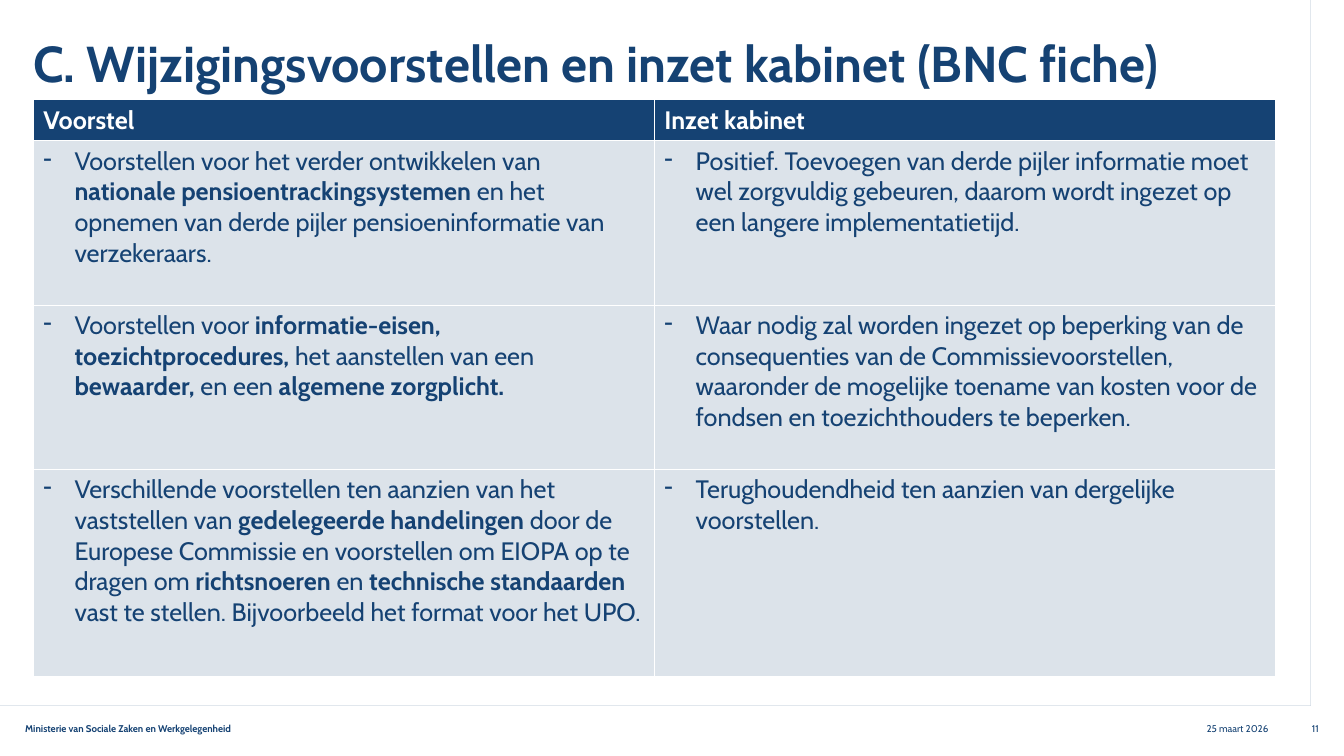
import math
from dataclasses import dataclass

import pptx
import pptx.dml.color
import pptx.enum.text
import pptx.oxml
import pptx.oxml.ns
import pptx.util

Inches = pptx.util.Inches
Pt = pptx.util.Pt
Align = pptx.enum.text.PP_ALIGN
Anchor = pptx.enum.text.MSO_ANCHOR

FONT = "Cabin"
NAVY = "154273"
PALE = "DCE3EA"
WHITE = "FFFFFF"


@dataclass
class FooterText:
    text: str
    left: float
    width: float
    align: Align = Align.RIGHT
    bold: bool = False


@dataclass
class ProposalRow:
    height: float
    proposal: str
    position: str


FOOTER = [
    FooterText("Ministerie van Sociale Zaken en Werkgelegenheid", 0.25, 3.19, Align.LEFT, True),
    FooterText("25 maart 2026", 11.75, 0.83),
    FooterText("11", 12.65, 0.43),
]

ROWS = [
    ProposalRow(0.4, "Voorstel", "Inzet kabinet"),
    ProposalRow(
        1.63,
        "Voorstellen voor het verder ontwikkelen van **nationale pensioentrackingsystemen** "
        "en het opnemen van derde pijler pensioeninformatie van verzekeraars.",
        "Positief. Toevoegen van derde pijler informatie moet wel zorgvuldig gebeuren, "
        "daarom wordt ingezet op een langere implementatietijd.",
    ),
    ProposalRow(
        1.63,
        "Voorstellen voor **informatie-eisen, toezichtprocedures, **het aanstellen van een "
        "**bewaarder, **en een **algemene zorgplicht.**",
        "Waar nodig zal worden ingezet op beperking van de consequenties van de "
        "Commissievoorstellen, waaronder de mogelijke toename van kosten voor de fondsen "
        "en toezichthouders te beperken.",
    ),
    ProposalRow(
        2.06,
        "Verschillende voorstellen ten aanzien van het vaststellen van "
        "**gedelegeerde handelingen** door de Europese Commissie en voorstellen om EIOPA "
        "op te dragen om **richtsnoeren** en **technische standaarden **vast te stellen. "
        "Bijvoorbeeld het format voor het UPO.",
        "Terughoudendheid ten aanzien van dergelijke voorstellen.",
    ),
]


def color(value: str) -> pptx.dml.color.RGBColor:
    return pptx.dml.color.RGBColor.from_string(value)


def format_font(paragraph, size: float, value: str, bold: bool | None = None) -> None:
    paragraph.font.name = FONT
    paragraph.font.size = Pt(size)
    paragraph.font.color.rgb = color(value)
    paragraph.font.bold = bold


def clear_margins(frame) -> None:
    frame.margin_left = frame.margin_right = frame.margin_top = frame.margin_bottom = 0
    frame.word_wrap = True


def add_title(slide, text: str) -> None:
    title = slide.shapes.title
    title.left, title.top = Inches(0.33), Inches(0.4)
    title.width, title.height = Inches(11.83), Inches(0.99)
    frame = title.text_frame
    clear_margins(frame)
    frame.auto_size = pptx.enum.text.MSO_AUTO_SIZE.NONE
    frame.vertical_anchor = Anchor.TOP
    frame.text = text
    paragraph = frame.paragraphs[0]
    paragraph.alignment = Align.LEFT
    paragraph.line_spacing = 0.87
    format_font(paragraph, 36, NAVY, True)


def add_footer(slide, item: FooterText) -> None:
    box = slide.shapes.add_textbox(Inches(item.left), Inches(7.17), Inches(item.width), Inches(0.28))
    clear_margins(box.text_frame)
    box.text_frame.text = item.text
    paragraph = box.text_frame.paragraphs[0]
    paragraph.alignment = item.align
    format_font(paragraph, 7, NAVY, item.bold)


def frame_edge(radius: float) -> list[tuple[float, float]]:
    center_x, center_y = 12.07, 5.99
    angles = [math.radians(90 - 3 * step) for step in range(31)]
    arc = [(center_x + radius * math.cos(a), center_y + radius * math.sin(a)) for a in angles]
    return [(0.25, center_y + radius), *arc, (center_x + radius, 0.25)]


def add_frame(slide) -> None:
    points = frame_edge(1.01) + frame_edge(1.0)[::-1]
    builder = slide.shapes.build_freeform(*points[0], scale=Inches(1))
    builder.add_line_segments(points[1:], close=True)
    shape = builder.convert_to_shape()
    shape.shadow.inherit = False
    shape.fill.solid()
    shape.fill.fore_color.rgb = color(NAVY)
    shape.line.fill.background()


def add_borders(cell) -> None:
    properties = cell._tc.get_or_add_tcPr()
    for side in ("lnL", "lnR", "lnT", "lnB"):
        properties.append(pptx.oxml.parse_xml(
            f'<a:{side} {pptx.oxml.ns.nsdecls("a")} w="{Pt(0.75)}">'
            f'<a:solidFill><a:srgbClr val="{WHITE}"/></a:solidFill></a:{side}>'
        ))


def add_dash(paragraph) -> None:
    properties = paragraph._p.get_or_add_pPr()
    properties.set("marL", str(Inches(0.31)))
    properties.set("indent", str(-Inches(0.31)))
    properties.append(pptx.oxml.parse_xml(f'<a:buChar {pptx.oxml.ns.nsdecls("a")} char="-"/>'))


def fill_cell(cell, text: str, header: bool) -> None:
    add_borders(cell)
    cell.fill.solid()
    cell.fill.fore_color.rgb = color(NAVY if header else PALE)
    paragraph = cell.text_frame.paragraphs[0]
    if not header:
        add_dash(paragraph)
    format_font(paragraph, 18, WHITE if header else NAVY)
    for index, part in enumerate(text.split("**")):
        if part:
            run = paragraph.add_run()
            run.text = part
            run.font.bold = header or index % 2 == 1


def add_proposals(slide) -> None:
    height = sum(row.height for row in ROWS)
    table = slide.shapes.add_table(
        len(ROWS), 2, Inches(0.33), Inches(0.99), Inches(12.32), Inches(height)
    ).table
    table.horz_banding = False
    for index, row in enumerate(ROWS):
        table.rows[index].height = Inches(row.height)
        for column, text in enumerate((row.proposal, row.position)):
            fill_cell(table.cell(index, column), text, index == 0)


def main() -> None:
    presentation = pptx.Presentation()
    presentation.slide_width = Inches(13.33)
    presentation.slide_height = Inches(7.5)
    slide = presentation.slides.add_slide(presentation.slide_layouts[5])
    add_frame(slide)
    add_title(slide, "C. Wijzigingsvoorstellen en inzet kabinet (BNC fiche)")
    add_proposals(slide)
    for item in FOOTER:
        add_footer(slide, item)
    presentation.save("out.pptx")


if __name__ == "__main__":
    main()
